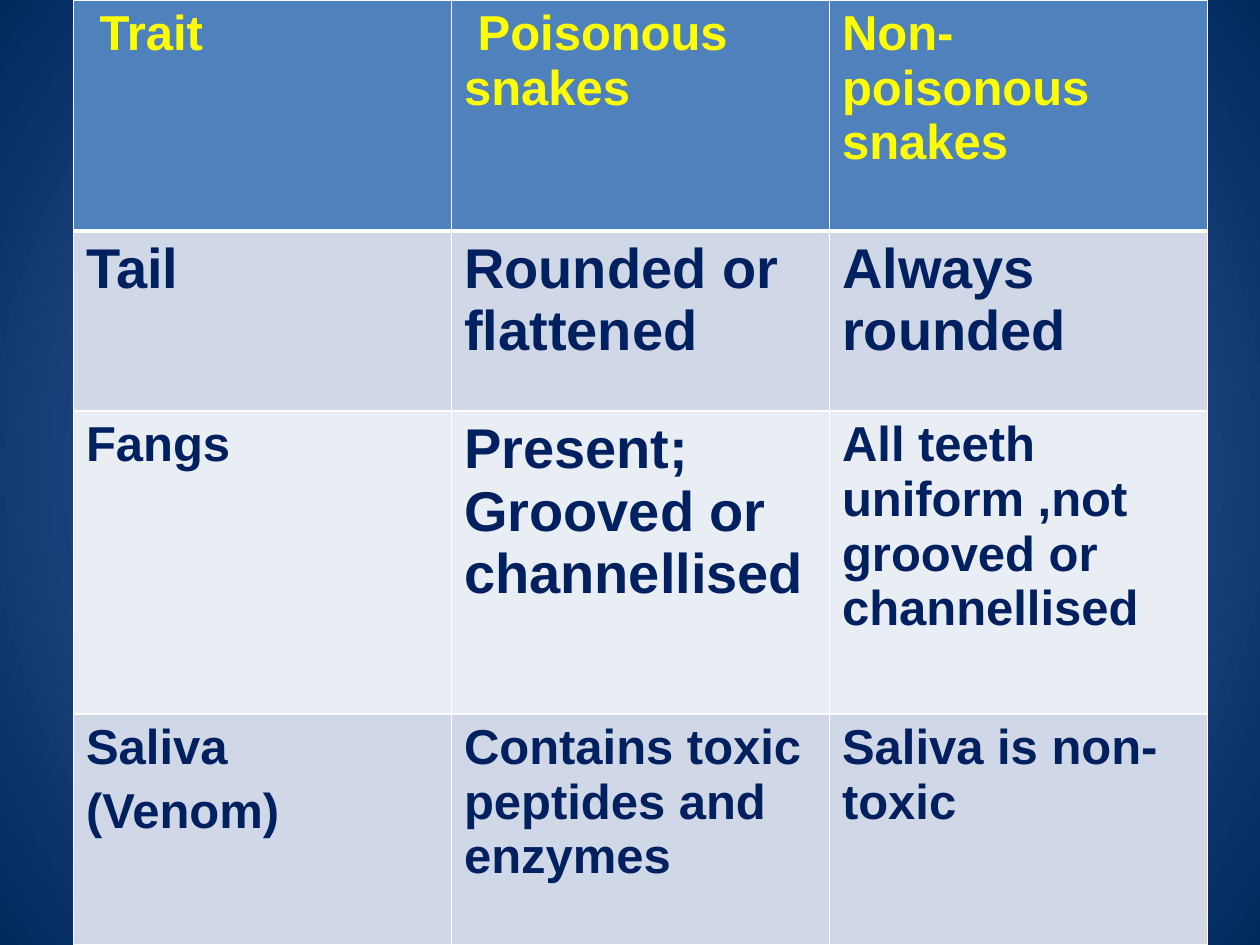
from dataclasses import dataclass

from lxml.etree import SubElement
from pptx import Presentation
from pptx.dml.color import RGBColor
from pptx.oxml.ns import qn
from pptx.util import Pt


@dataclass(frozen=True)
class Theme:
    font: str = "Arial"
    center: str = "5E7CC5"
    edge: str = "00295C"
    header_fill: str = "4F81BD"
    band_fills: tuple = ("D0D8E8", "E9EDF4")
    header_text: str = "FFFF00"
    body_text: str = "002060"
    border: str = "FFFFFF"
    thin: float = 1
    thick: float = 3
    normal: float = 28
    large: float = 32
    paragraph_gap: float = 0.2


THEME = Theme()
COLUMN_WIDTH = 216
ROW_HEIGHTS = (132, 103, 173, 132)
ROWS = (
    (" Trait", " Poisonous snakes", "Non-poisonous snakes"),
    ("Tail", "Rounded or flattened", "Always rounded"),
    ("Fangs", "Present; Grooved or channellised",
     "All teeth uniform ,not grooved or channellised"),
    ("Saliva\n(Venom)", "Contains toxic peptides and enzymes",
     "Saliva is non-toxic"),
)
LARGE_CELLS = {(1, 0), (1, 1), (1, 2), (2, 1)}


def set_background(slide):
    fill = slide.background.fill
    fill.gradient()
    for stop, color, position in zip(
        fill.gradient_stops, (THEME.center, THEME.edge), (0, 1)
    ):
        stop.color.rgb = RGBColor.from_string(color)
        stop.position = position
    gradient = slide.background._cSld.find(".//" + qn("a:gradFill"))
    gradient.remove(gradient.find(qn("a:lin")))
    circle = SubElement(gradient, qn("a:path"), {"path": "circle"})
    sides = {side: "50000" for side in ("l", "t", "r", "b")}
    SubElement(circle, qn("a:fillToRect"), sides)


def set_borders(cell, row_index):
    properties = cell._tc.get_or_add_tcPr()
    thick_side = {0: "B", 1: "T"}.get(row_index)
    for side in "LRTB":
        width = THEME.thick if side == thick_side else THEME.thin
        line = SubElement(properties, qn(f"a:ln{side}"), {"w": str(Pt(width))})
        solid = SubElement(line, qn("a:solidFill"))
        SubElement(solid, qn("a:srgbClr"), {"val": THEME.border})


def write_text(cell, text, size, color):
    text_format = {"name": THEME.font, "size": Pt(size), "bold": True}
    cell.text = text
    for index, paragraph in enumerate(cell.text_frame.paragraphs):
        if index:
            paragraph.space_before = Pt(size * THEME.paragraph_gap)
        font = paragraph.runs[0].font
        for attribute, value in text_format.items():
            setattr(font, attribute, value)
        font.color.rgb = RGBColor.from_string(color)


def add_trait_table(slide):
    columns = len(ROWS[0])
    table = slide.shapes.add_table(
        len(ROWS), columns, Pt(42), Pt(0),
        Pt(COLUMN_WIDTH * columns), Pt(sum(ROW_HEIGHTS)),
    ).table
    for column in table.columns:
        column.width = Pt(COLUMN_WIDTH)
    for row_index, (texts, height) in enumerate(zip(ROWS, ROW_HEIGHTS)):
        table.rows[row_index].height = Pt(height)
        if row_index == 0:
            fill, color = THEME.header_fill, THEME.header_text
        else:
            fill, color = THEME.band_fills[(row_index - 1) % 2], THEME.body_text
        for column_index, text in enumerate(texts):
            position = (row_index, column_index)
            cell = table.cell(*position)
            size = THEME.large if position in LARGE_CELLS else THEME.normal
            set_borders(cell, row_index)
            cell.fill.solid()
            cell.fill.fore_color.rgb = RGBColor.from_string(fill)
            write_text(cell, text, size, color)


def main():
    presentation = Presentation()
    presentation.slide_width = Pt(720)
    presentation.slide_height = Pt(540)
    slide = presentation.slides.add_slide(presentation.slide_layouts[6])
    set_background(slide)
    add_trait_table(slide)
    presentation.save("out.pptx")


if __name__ == "__main__":
    main()
